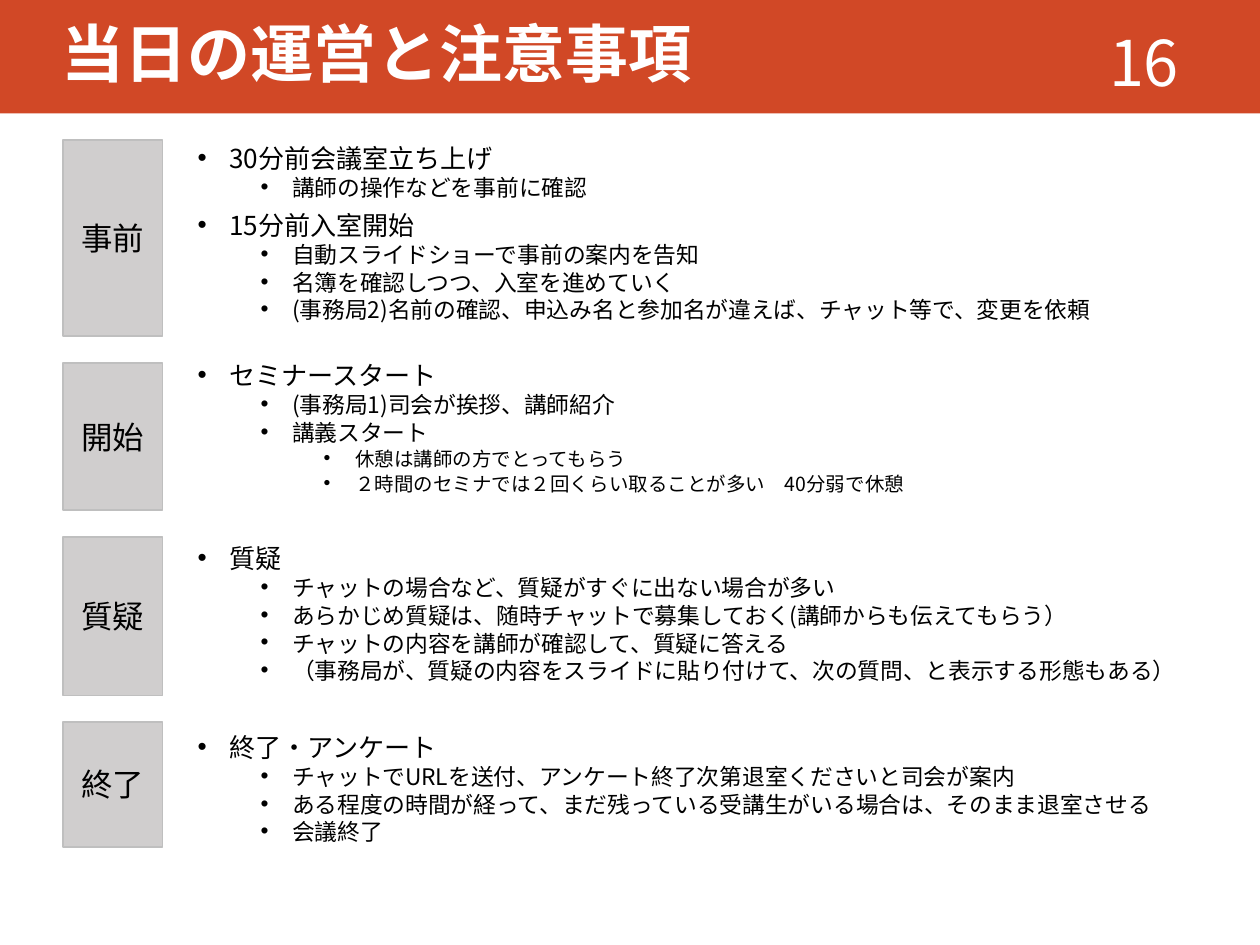
from dataclasses import dataclass

from lxml.etree import SubElement
from pptx import Presentation
from pptx.dml.color import RGBColor
from pptx.enum.shapes import MSO_SHAPE
from pptx.enum.text import MSO_ANCHOR, PP_ALIGN
from pptx.oxml.ns import qn
from pptx.util import Inches, Pt


@dataclass(frozen=True)
class Theme:
    font: str = "Noto Sans CJK JP"
    banner: str = "D14826"
    label: str = "D0CECE"
    edge: str = "BFBFBF"
    light: str = "FFFFFF"
    dark: str = "000000"
    title_size: float = 36
    label_size: float = 18
    body_sizes: tuple = (14.9, 13, 11.1)
    space_before: tuple = (10, 4.8, 4.8)


@dataclass(frozen=True)
class Section:
    label: str
    height: float
    space_before: float
    items: tuple


THEME = Theme()
LABEL_LEFT, LABEL_TOP, LABEL_WIDTH, LABEL_GAP = 0.5, 1.11, 0.79, 0.21

SECTIONS = (
    Section("事前", 1.56, 0, (
        (0, "30分前会議室立ち上げ"),
        (1, "講師の操作などを事前に確認"),
        (0, "15分前入室開始"),
        (1, "自動スライドショーで事前の案内を告知"),
        (1, "名簿を確認しつつ、入室を進めていく"),
        (1, "(事務局2)名前の確認、申込み名と参加名が違えば、チャット等で、変更を依頼"),
    )),
    Section("開始", 1.17, 26, (
        (0, "セミナースタート"),
        (1, "(事務局1)司会が挨拶、講師紹介"),
        (1, "講義スタート"),
        (2, "休憩は講師の方でとってもらう"),
        (2, "２時間のセミナでは２回くらい取ることが多い　40分弱で休憩"),
    )),
    Section("質疑", 1.26, 32.5, (
        (0, "質疑"),
        (1, "チャットの場合など、質疑がすぐに出ない場合が多い"),
        (1, "あらかじめ質疑は、随時チャットで募集しておく(講師からも伝えてもらう）"),
        (1, "チャットの内容を講師が確認して、質疑に答える"),
        (1, "（事務局が、質疑の内容をスライドに貼り付けて、次の質問、と表示する形態もある）"),
    )),
    Section("終了", 0.99, 32.5, (
        (0, "終了・アンケート"),
        (1, "チャットでURLを送付、アンケート終了次第退室くださいと司会が案内"),
        (1, "ある程度の時間が経って、まだ残っている受講生がいる場合は、そのまま退室させる"),
        (1, "会議終了"),
    )),
)


def apply_format(target, values: dict) -> None:
    for name, value in values.items():
        setattr(target, name, value)


def add_run(p, text: str, size: float, color: str, bold: bool = False) -> None:
    r = p.add_run()
    r.text = text
    apply_format(r.font, {"name": THEME.font, "size": Pt(size), "bold": bold})
    r.font.color.rgb = RGBColor.from_string(color)
    SubElement(r.font._element, qn("a:ea"), typeface=THEME.font)


def add_rect(s, left: float, top: float, width: float, height: float, fill: str):
    sp = s.shapes.add_shape(MSO_SHAPE.RECTANGLE, Inches(left), Inches(top),
                            Inches(width), Inches(height))
    sp.shadow.inherit = False
    sp.fill.solid()
    sp.fill.fore_color.rgb = RGBColor.from_string(fill)
    sp.line.fill.background()
    apply_format(sp.text_frame, {"word_wrap": True, "vertical_anchor": MSO_ANCHOR.MIDDLE})
    return sp


def add_title(s, text: str) -> None:
    sp = add_rect(s, 0, 0, 10, 0.9, THEME.banner)
    p = sp.text_frame.paragraphs[0]
    apply_format(p, {"alignment": PP_ALIGN.LEFT, "line_spacing": 0.9})
    p._p.get_or_add_pPr().set("marL", str(Inches(0.39)))
    add_run(p, text, THEME.title_size, THEME.light, bold=True)


def add_page_number(s, text: str) -> None:
    sp = s.shapes.add_textbox(Inches(8.31), Inches(0.29), Inches(1.54), Inches(0.4))
    tf = sp.text_frame
    apply_format(tf, {"word_wrap": True, "vertical_anchor": MSO_ANCHOR.MIDDLE})
    p = tf.paragraphs[0]
    p.alignment = PP_ALIGN.CENTER
    add_run(p, text, THEME.title_size, THEME.light)


def add_label(s, section: Section, top: float) -> None:
    sp = add_rect(s, LABEL_LEFT, top, LABEL_WIDTH, section.height, THEME.label)
    sp.line.color.rgb = RGBColor.from_string(THEME.edge)
    sp.line.width = Pt(1)
    p = sp.text_frame.paragraphs[0]
    p.alignment = PP_ALIGN.CENTER
    add_run(p, section.label, THEME.label_size, THEME.dark)


def add_bullet(p, level: int, text: str, space_before: float) -> None:
    apply_format(p, {"level": level, "line_spacing": 0.7, "space_before": Pt(space_before)})
    pPr = p._p.get_or_add_pPr()
    pPr.set("marL", str(Inches(0.25 + 0.5 * level)))
    pPr.set("indent", str(Inches(-0.25)))
    SubElement(pPr, qn("a:buFont"), typeface="Arial")
    SubElement(pPr, qn("a:buChar"), char="•")
    add_run(p, text, THEME.body_sizes[level], THEME.dark)


def add_body(s, sections: tuple) -> None:
    sp = s.shapes.add_textbox(Inches(1.47), Inches(1.15), Inches(8.29), Inches(6.06))
    tf = sp.text_frame
    tf.word_wrap = True
    p = tf.paragraphs[0]
    for section in sections:
        for i, (level, text) in enumerate(section.items):
            if p.runs:
                p = tf.add_paragraph()
            space = THEME.space_before[level] if i else section.space_before
            add_bullet(p, level, text, space)


def main() -> None:
    prs = Presentation()
    apply_format(prs, {"slide_width": Inches(10), "slide_height": Inches(7.5)})
    s = prs.slides.add_slide(prs.slide_layouts[6])
    add_title(s, "当日の運営と注意事項")
    add_body(s, SECTIONS)
    add_page_number(s, "16")
    top = LABEL_TOP
    for section in SECTIONS:
        add_label(s, section, top)
        top += section.height + LABEL_GAP
    prs.save("out.pptx")


if __name__ == "__main__":
    main()
